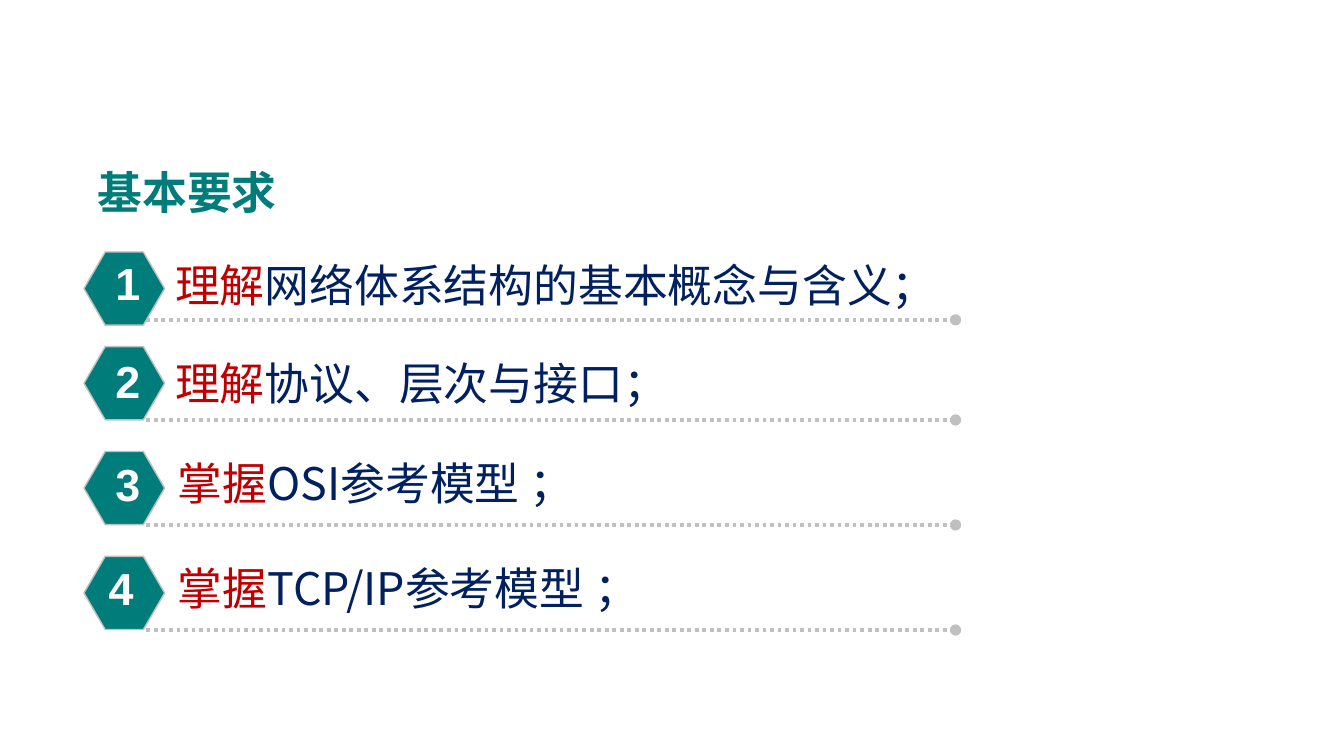
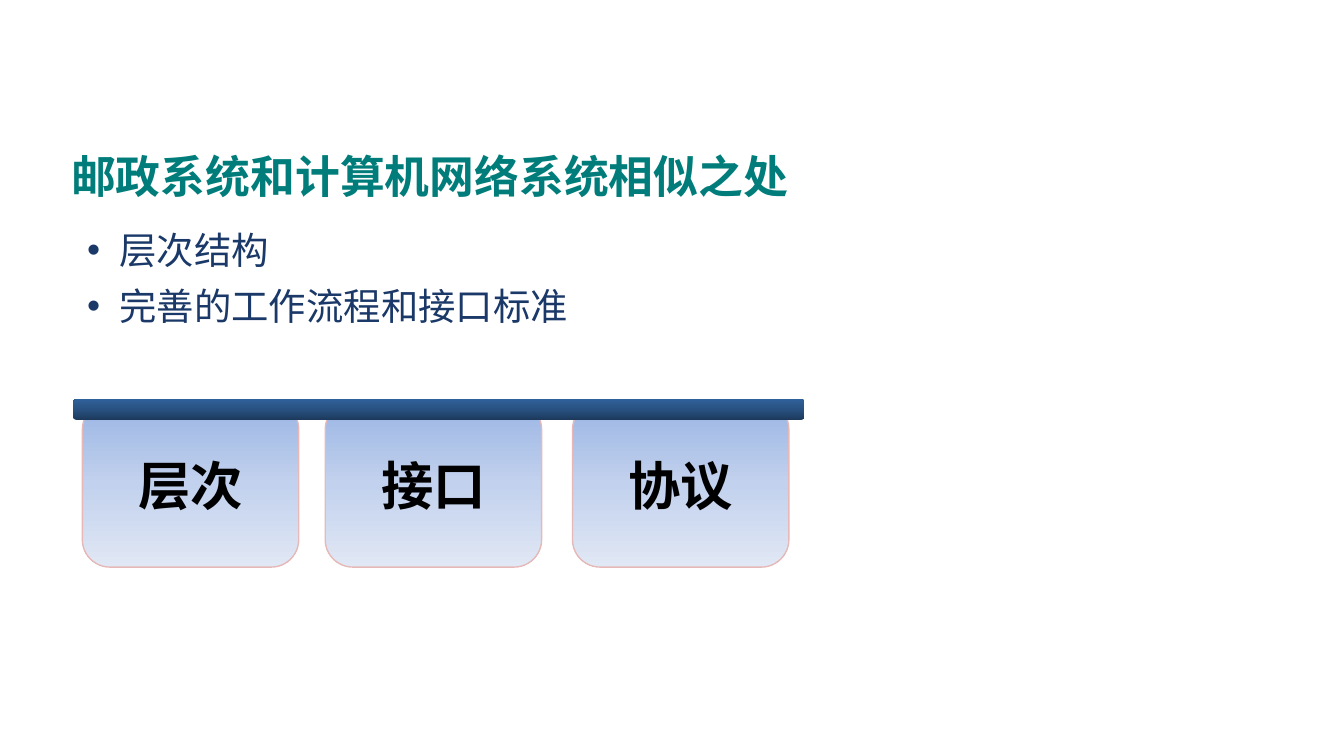
from copy import deepcopy
from dataclasses import dataclass

from lxml.etree import SubElement
from pptx import Presentation
from pptx.dml.color import RGBColor
from pptx.enum.dml import MSO_LINE
from pptx.enum.lang import MSO_LANGUAGE_ID
from pptx.enum.shapes import MSO_CONNECTOR, MSO_SHAPE
from pptx.enum.text import MSO_ANCHOR, MSO_AUTO_SIZE, PP_ALIGN
from pptx.oxml.ns import qn
from pptx.util import Inches, Pt

SLIDE_WIDTH = Inches(10)
SLIDE_HEIGHT = SLIDE_WIDTH * 9 // 16
COLUMNS = 100
ROWS = 56.25


@dataclass(frozen=True)
class Theme:
    teal: str = "007D7A"
    green: str = "008000"
    red: str = "C00000"
    brick: str = "C0504D"
    navy: str = "002060"
    blue: str = "1A3868"
    gray: str = "C0C0C0"
    rose: str = "E6B9B8"
    white: str = "FFFFFF"
    black: str = "000000"
    card_stops: tuple[str, ...] = ("9AB5E4", "C2D1ED", "E1E8F5")
    bar_stops: tuple[str, ...] = ("1C395B", "285181", "306099")
    serif: str = "Times New Roman"
    book: str = "TeX Gyre Pagella"
    sans: str = "Arial"
    chinese: str = "Noto Sans CJK JP"
    heading_size: int = 24
    bullet_size: int = 20
    card_size: int = 28


THEME = Theme()


@dataclass(frozen=True)
class Area:
    left: float
    top: float
    width: float
    height: float

    def lengths(self) -> tuple[int, int, int, int]:
        return (across(self.left), down(self.top),
                across(self.width), down(self.height))


@dataclass(frozen=True)
class Requirement:
    verb: str
    topic: str
    space_color: str
    space_font: str
    text_area: Area
    wrap: bool
    hexagon_top: float
    rule_top: float
    number_left: float
    number_top: float


REQUIREMENTS = (
    Requirement("理解", "网络体系结构的基本概念与含义；", THEME.green, THEME.book,
                Area(11.3, 18.7, 60.1, 5), False, 18.75, 23.8, 7.6, 18.5),
    Requirement("理解", "协议、层次与接口；", THEME.brick, THEME.serif,
                Area(11.3, 26, 41.6, 5), False, 25.8, 31.25, 7.6, 25.75),
    Requirement("掌握", "OSI参考模型 ；", THEME.red, THEME.serif,
                Area(11.5, 33.4, 40.9, 5), True, 33.6, 39.06, 7.6, 33.45),
    Requirement("掌握", "TCP/IP参考模型 ；", THEME.brick, THEME.serif,
                Area(11.5, 41.2, 39.2, 5), True, 41.4, 46.88, 7.1, 41.2),
)

CARDS = (("层次", 6.13), ("接口", 24.2), ("协议", 42.6))


def across(columns: float) -> int:
    return round(SLIDE_WIDTH * columns / COLUMNS)


def down(rows: float) -> int:
    return round(SLIDE_HEIGHT * rows / ROWS)


def add_span(para, text: str, *, size: int, color: str,
             font: str = THEME.serif, bold: bool = False) -> None:
    span = para.add_run()
    span.text = text
    span.font.size = Pt(size)
    span.font.bold = bold
    span.font.color.rgb = RGBColor.from_string(color)
    span.font.name = font
    span.font.language_id = MSO_LANGUAGE_ID.SIMPLIFIED_CHINESE
    SubElement(span.font._element, qn("a:ea"), typeface=THEME.chinese)


def add_text_box(page, area: Area, wrap: bool = True):
    box = page.shapes.add_textbox(*area.lengths())
    box.text_frame.word_wrap = wrap
    return box


def add_title_page(deck, text: str, area: Area):
    page = deck.slides.add_slide(deck.slide_layouts[5])
    title = page.shapes.title
    title.left, title.top, title.width, title.height = area.lengths()
    title.text_frame.auto_size = MSO_AUTO_SIZE.NONE
    title.text_frame.vertical_anchor = MSO_ANCHOR.MIDDLE
    para = title.text_frame.paragraphs[0]
    para.alignment = PP_ALIGN.LEFT
    para.line_spacing = 1.2
    add_span(para, text, size=THEME.heading_size, color=THEME.teal, bold=True)
    return page


def add_preset(page, preset: MSO_SHAPE, area: Area, outline: str | None = None):
    shape = page.shapes.add_shape(preset, *area.lengths())
    shape.shadow.inherit = False
    if outline:
        shape.line.color.rgb = RGBColor.from_string(outline)
        shape.line.width = Pt(0.75)
    else:
        shape.line.fill.background()
    return shape


def fill_gradient(shape, colors: tuple[str, ...], angle: int) -> None:
    shape.fill.gradient()
    shape.fill.gradient_angle = angle
    stop_list = shape._element.spPr.find(qn("a:gradFill")).find(qn("a:gsLst"))
    stop_list.insert(1, deepcopy(stop_list[0]))
    for index, (stop, color) in enumerate(zip(shape.fill.gradient_stops, colors)):
        stop.position = index / (len(colors) - 1)
        stop.color.rgb = RGBColor.from_string(color)


def add_dotted_rule(page, top: float) -> None:
    rule = page.shapes.add_connector(MSO_CONNECTOR.STRAIGHT, across(10.9), down(top),
                                     across(71.1), down(top))
    rule.line.color.rgb = RGBColor.from_string(THEME.gray)
    rule.line.width = Pt(2)
    rule.line.dash_style = MSO_LINE.ROUND_DOT
    properties = rule._element.spPr
    SubElement(properties.find(qn("a:ln")), qn("a:tailEnd"), type="oval")
    SubElement(properties, qn("a:effectLst"))


def add_requirement(page, number: int, item: Requirement) -> None:
    box = add_text_box(page, item.text_area, item.wrap)
    para = box.text_frame.paragraphs[0]
    size = THEME.heading_size
    add_span(para, " ", size=size, color=item.space_color, font=item.space_font)
    add_span(para, item.verb, size=size, color=THEME.red)
    add_span(para, item.topic, size=size, color=THEME.navy, font=THEME.chinese)

    add_dotted_rule(page, item.rule_top)
    hexagon = add_preset(page, MSO_SHAPE.HEXAGON, Area(6.25, item.hexagon_top, 6, 5.45),
                         THEME.gray)
    hexagon.adjustments[0] = 0.29
    hexagon.fill.solid()
    hexagon.fill.fore_color.rgb = RGBColor.from_string(THEME.teal)

    badge = add_text_box(page, Area(item.number_left, item.number_top, 2.8, 3.8), False)
    frame = badge.text_frame
    frame.margin_left, frame.margin_right = across(1), 0
    frame.margin_top, frame.margin_bottom = down(0.55), 0
    para = frame.paragraphs[0]
    para.alignment = PP_ALIGN.CENTER
    add_span(para, str(number), size=size, color=THEME.white, font=THEME.sans, bold=True)


def add_bullets(page, area: Area, lines: tuple[str, ...]) -> None:
    frame = add_text_box(page, area).text_frame
    for index, line in enumerate(lines):
        para = frame.add_paragraph() if index else frame.paragraphs[0]
        properties = para._element.get_or_add_pPr()
        properties.set("marL", str(across(2.4)))
        properties.set("indent", str(-across(2.4)))
        SubElement(properties, qn("a:buFont"), typeface=THEME.sans)
        SubElement(properties, qn("a:buChar"), char="•")
        if index:
            para.space_before = Pt(6)
        add_span(para, line, size=THEME.bullet_size, color=THEME.blue)


def add_card(page, text: str, left: float) -> None:
    card = add_preset(page, MSO_SHAPE.ROUNDED_RECTANGLE, Area(left, 29.9, 16.1, 12.3),
                      THEME.rose)
    fill_gradient(card, THEME.card_stops, 270)
    card.text_frame.vertical_anchor = MSO_ANCHOR.MIDDLE
    para = card.text_frame.paragraphs[0]
    para.alignment = PP_ALIGN.CENTER
    add_span(para, text, size=THEME.card_size, color=THEME.black, font=THEME.book, bold=True)


def build_requirements(deck) -> None:
    page = add_title_page(deck, "基本要求", Area(6.25, 9.15, 70.3, 9.4))
    for number, item in enumerate(REQUIREMENTS, start=1):
        add_requirement(page, number, item)


def build_similarities(deck) -> None:
    page = add_title_page(deck, "邮政系统和计算机网络系统相似之处",
                          Area(4.3, 6.05, 73.2, 13.2))
    add_bullets(page, Area(5.5, 16.4, 61.4, 8.8), ("层次结构", "完善的工作流程和接口标准"))
    for text, left in CARDS:
        add_card(page, text, left)
    bar = add_preset(page, MSO_SHAPE.ROUNDED_RECTANGLE, Area(5.45, 29.7, 54.4, 1.55))
    fill_gradient(bar, THEME.bar_stops, 90)


def main() -> None:
    deck = Presentation()
    deck.slide_width = SLIDE_WIDTH
    deck.slide_height = SLIDE_HEIGHT
    build_requirements(deck)
    build_similarities(deck)
    deck.save("out.pptx")


if __name__ == "__main__":
    main()
